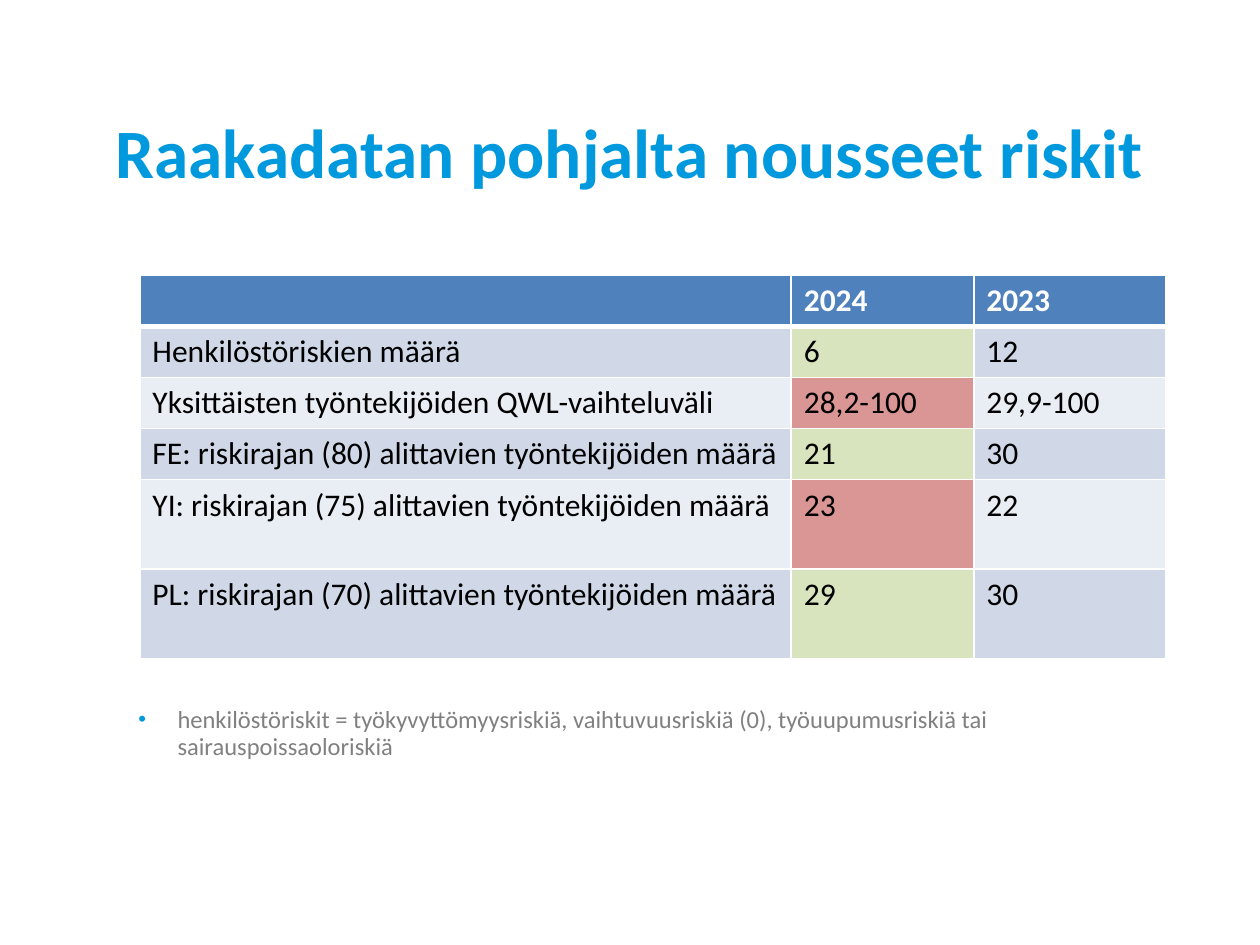
from lxml import etree
from pptx import Presentation
from pptx import util as u
from pptx.dml.color import RGBColor
from pptx.enum import text as t
from pptx.oxml.ns import qn

# Content
TITLE = "Raakadatan pohjalta nousseet riskit"
HEAD = ["", "2024", "2023"]
ROWS = [
    ("Henkilöstöriskien määrä", "6", "12", "good"),
    ("Yksittäisten työntekijöiden QWL-vaihteluväli", "28,2-100", "29,9-100", "bad"),
    ("FE: riskirajan (80) alittavien työntekijöiden määrä", "21", "30", "good"),
    ("YI: riskirajan (75) alittavien työntekijöiden määrä", "23", "22", "bad"),
    ("PL: riskirajan (70) alittavien työntekijöiden määrä", "29", "30", "good"),
]
NOTE = ("henkilöstöriskit = työkyvyttömyysriskiä, vaihtuvuusriskiä (0), "
        "työuupumusriskiä tai sairauspoissaoloriskiä")

# Look
BLUE, GREY, WHITE, BLACK = "0099DD", "808080", "FFFFFF", "000000"
TOP = "4F81BD"
BANDS = ["D0D8E8", "E9EDF4"]
MARK = {"good": "D7E4BD", "bad": "D99694"}
COLS = [13.13, 3.68, 3.86]
HIGH = [1.03] * 4 + [1.8] * 2
LEFT, WIDE = 1.27, 22.86


def rgb(code):
    return RGBColor.from_string(code)


def write(frame, words, size=18, color=BLACK, bold=False, align=None, line=None):
    para = frame.paragraphs[0]
    para.alignment = align
    para.line_spacing = line
    run = para.add_run()
    run.text = words
    font = run.font
    font.name, font.size, font.bold = "Calibri", u.Pt(size), bold
    font.color.rgb = rgb(color)
    return para


def add_box(top, high, anchor):
    box = slide.shapes.add_textbox(u.Cm(LEFT), u.Cm(top), u.Cm(WIDE), u.Cm(high))
    frame = box.text_frame
    frame.word_wrap = True
    frame.vertical_anchor = anchor
    return frame


def add_edge(cell, side, width):
    edge = etree.SubElement(cell._tc.get_or_add_tcPr(), qn(f"a:{side}"),
                            w=str(u.Pt(width)))
    fill = etree.SubElement(edge, qn("a:solidFill"))
    etree.SubElement(fill, qn("a:srgbClr"), val=WHITE)


def add_bullet(para, left, hang):
    props = para._p.get_or_add_pPr()
    props.set("marL", str(u.Cm(left)))
    props.set("indent", str(-u.Cm(hang)))
    color = etree.SubElement(props, qn("a:buClr"))
    etree.SubElement(color, qn("a:srgbClr"), val=BLUE)
    etree.SubElement(props, qn("a:buSzPct"), val="90000")
    etree.SubElement(props, qn("a:buFont"), typeface="Arial")
    etree.SubElement(props, qn("a:buChar"), char="•")


deck = Presentation()
deck.slide_width, deck.slide_height = u.Cm(25.4), u.Cm(19.05)
slide = deck.slides.add_slide(deck.slide_layouts[6])

# Title
write(add_box(1.45, 3.18, t.MSO_ANCHOR.MIDDLE), TITLE, size=39.6, color=BLUE,
      bold=True, align=t.PP_ALIGN.CENTER)

# Note below the table
note = write(add_box(14.14, 2.37, t.MSO_ANCHOR.TOP), NOTE, size=14, color=GREY, line=0.9)
add_bullet(note, 2.06, 0.79)

# Risk table
grid = slide.shapes.add_table(len(HIGH), len(COLS), u.Cm(2.82), u.Cm(5.55),
                              u.Cm(sum(COLS)), u.Cm(sum(HIGH))).table
for col, wide in zip(grid.columns, COLS):
    col.width = u.Cm(wide)
for row, high in zip(grid.rows, HIGH):
    row.height = u.Cm(high)

for r, (*words, mark) in enumerate([(*HEAD, None), *ROWS]):
    for c, word in enumerate(words):
        cell = grid.cell(r, c)
        if r == 0:
            shade = TOP
        else:
            shade = MARK[mark] if c == 1 else BANDS[(r - 1) % 2]
        for side in ("lnL", "lnR", "lnT", "lnB"):
            thick = (r == 0 and side == "lnB") or (r == 1 and side == "lnT")
            add_edge(cell, side, 3 if thick else 1)
        cell.fill.solid()
        cell.fill.fore_color.rgb = rgb(shade)
        if word:
            write(cell.text_frame, word, color=BLACK if r else WHITE, bold=r == 0)

deck.save("out.pptx")
